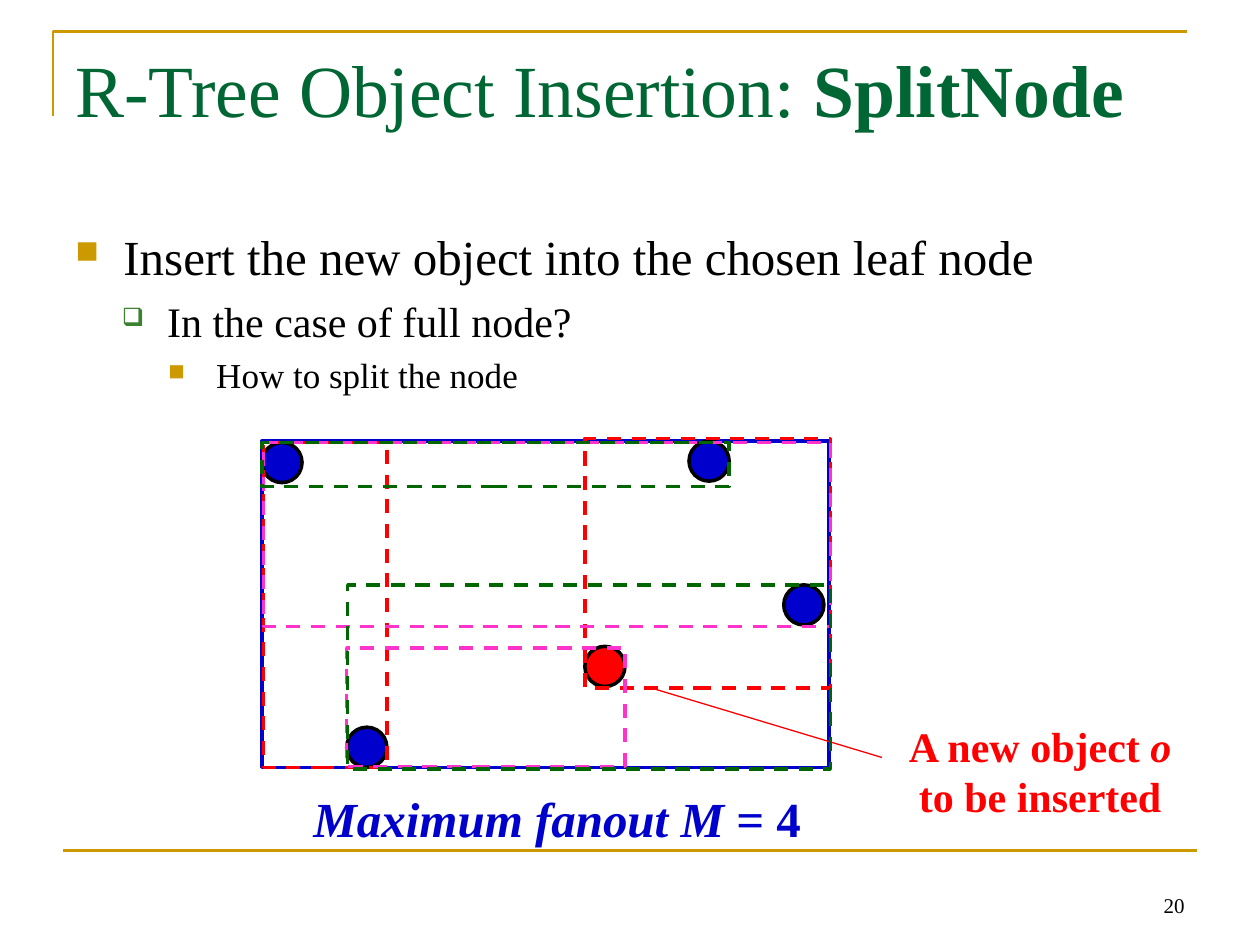
"""Build the R-tree SplitNode slide."""
import pptx
import pptx.util
import pptx.dml.color
import pptx.enum.dml
import pptx.enum.shapes
import pptx.enum.text
import pptx.oxml.ns
from lxml import etree

Cm, Pt = pptx.util.Cm, pptx.util.Pt
SHAPE = pptx.enum.shapes.MSO_SHAPE
ALIGN = pptx.enum.text.PP_ALIGN
ANCHOR = pptx.enum.text.MSO_ANCHOR
qn = pptx.oxml.ns.qn

GOLD, RED, BLUE, PINK, GREEN = "CC9900", "FF0000", "0000CC", "FF33CC", "006600"
BLACK, WHITE, TITLE_GREEN, BULLET_GREEN = "000000", "FFFFFF", "006633", "3B812F"
FONT = "Times New Roman"
DOT = 0.81

CORNER = [(1.07, 2.34), (1.07, 0.64), (23.93, 0.64)]
FOOT_RULE = (1.27, 17.15, 24.13, 17.15)
POINTER = (13.13, 13.87, 17.78, 15.27)
NODE = (5.28, 8.89, 11.43, 6.58)
OBJECTS = [
    (11.79, 13.03, RED),
    (5.28, 8.92, BLUE),
    (15.8, 11.79, BLUE),
    (13.89, 8.89, BLUE),
    (6.99, 14.66, BLUE),
]
SPLITS = [
    ((11.79, 8.84, 4.95, 5.03), RED),
    ((5.31, 8.92, 2.49, 6.55), RED),
    ((6.99, 13.06, 5.61, 2.39), PINK),
    ((5.31, 8.92, 11.43, 3.71), PINK),
    ((7.01, 11.79, 9.73, 3.71), GREEN),
    ((5.28, 8.92, 9.42, 0.89), GREEN),
]
BULLETS = [
    ("Insert the new object into the chosen leaf node", 28, 0.97, 0.97, "■", GOLD, 65),
    ("In the case of full node?", 24, 1.85, 0.91, "❑", BULLET_GREEN, 60),
    ("How to split the node", 20, 2.84, 0.97, "■", GOLD, 65),
]
TITLE = [("R-Tree Object Insertion: ", False, False), ("SplitNode", True, False)]
FANOUT = [("Maximum fanout M", True, True), (" = 4", True, False)]
LABEL = [("A new object ", True, False), ("o", True, True), (" to be inserted", True, False)]
NUMBER = [("20", False, False)]


def rgb(color):
    return pptx.dml.color.RGBColor.from_string(color)


def set_line(sp, color, width):
    sp.line.color.rgb = rgb(color)
    sp.line.width = Pt(width)


def add_shape(s, kind, box, line, fill=None):
    sp = s.shapes.add_shape(kind, *map(Cm, box))
    sp.shadow.inherit = False
    if fill:
        sp.fill.solid()
        sp.fill.fore_color.rgb = rgb(fill)
    else:
        sp.fill.background()
    set_line(sp, line, 2)
    return sp


def add_line(s, ends, color, width):
    sp = s.shapes.add_connector(pptx.enum.shapes.MSO_CONNECTOR.STRAIGHT, *map(Cm, ends))
    set_line(sp, color, width)
    etree.SubElement(sp._element.spPr, qn("a:effectLst"))


def set_font(p, size, color):
    p.font.name = FONT
    p.font.size = Pt(size)
    p.font.color.rgb = rgb(color)


def add_box(s, box, wrap=True, anchor=ANCHOR.TOP):
    tf = s.shapes.add_textbox(*map(Cm, box)).text_frame
    tf.word_wrap = wrap
    tf.vertical_anchor = anchor
    return tf


def add_text(s, box, runs, size, color, align=ALIGN.LEFT, **options):
    p = add_box(s, box, **options).paragraphs[0]
    p.alignment = align
    set_font(p, size, color)
    for text, bold, italic in runs:
        r = p.add_run()
        r.text = text
        r.font.bold = bold
        r.font.italic = italic


def add_bullets(s, box, items):
    tf = add_box(s, box)
    for i, (text, size, margin, hang, mark, color, scale) in enumerate(items):
        p = tf.add_paragraph() if i else tf.paragraphs[0]
        p.text = text
        p.level = i
        p.alignment = ALIGN.JUSTIFY
        p.space_before = Pt(round(size * 0.23, 1))
        set_font(p, size, BLACK)
        pPr = p._p.get_or_add_pPr()
        pPr.set("marL", str(Cm(margin)))
        pPr.set("indent", str(-Cm(hang)))
        bu_color = etree.Element(qn("a:buClr"))
        etree.SubElement(bu_color, qn("a:srgbClr"), val=color)
        bu_size = etree.Element(qn("a:buSzPct"), val=str(scale * 1000))
        bu_char = etree.Element(qn("a:buChar"), char=mark)
        at = pPr.index(pPr.find(qn("a:defRPr")))
        pPr[at:at] = [bu_color, bu_size, bu_char]


def main():
    prs = pptx.Presentation()
    prs.slide_width, prs.slide_height = Cm(25.4), Cm(19.05)
    s = prs.slides.add_slide(prs.slide_layouts[6])

    corner = [(Cm(x), Cm(y)) for x, y in CORNER]
    fb = s.shapes.build_freeform(*corner[0])
    fb.add_line_segments(corner[1:], close=False)
    sp = fb.convert_to_shape()
    sp.shadow.inherit = False
    sp.fill.background()
    set_line(sp, GOLD, 1.5)
    add_line(s, FOOT_RULE, GOLD, 1.5)

    add_text(s, (1.27, 0.76, 22.86, 3.18), TITLE, 42, TITLE_GREEN)
    add_bullets(s, (1.27, 4.45, 22.86, 12.57), BULLETS)

    add_shape(s, SHAPE.RECTANGLE, NODE, BLUE, WHITE)
    for x, y, color in OBJECTS:
        add_shape(s, SHAPE.OVAL, (x, y, DOT, DOT), BLACK, color)

    add_text(s, (6.07, 15.77, 10.44, 1.45), FANOUT, 28, BLUE, wrap=False)
    add_text(s, (17.78, 14.4, 6.38, 2.31), LABEL, 24, RED, ALIGN.CENTER)
    add_line(s, POINTER, RED, 0.75)
    for box, color in SPLITS:
        sp = add_shape(s, SHAPE.RECTANGLE, box, color)
        sp.line.dash_style = pptx.enum.dml.MSO_LINE.DASH
    add_text(s, (18.21, 17.35, 5.92, 1.27), NUMBER, 12, BLACK, ALIGN.RIGHT,
             anchor=ANCHOR.BOTTOM)
    prs.save("out.pptx")


if __name__ == "__main__":
    main()
